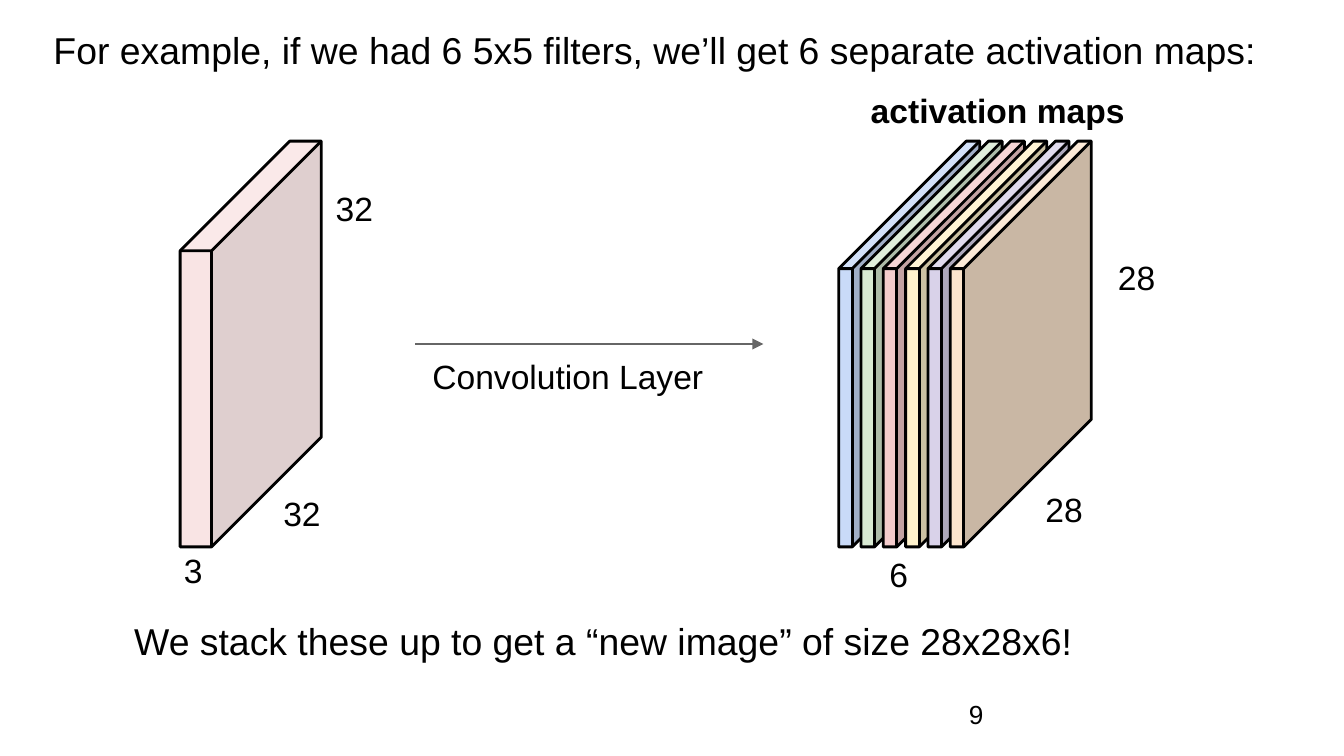
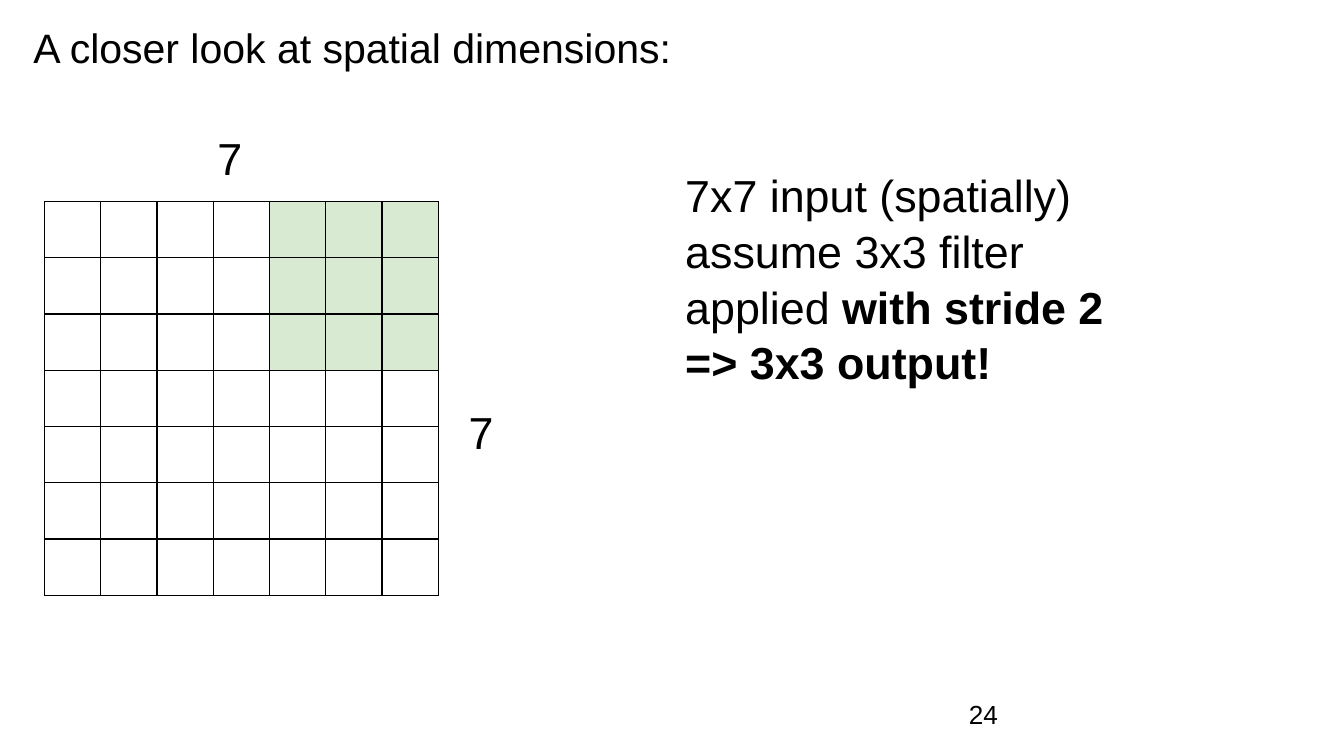
from lxml.etree import SubElement
from pptx import Presentation
from pptx.dml.color import RGBColor
from pptx.enum.shapes import MSO_CONNECTOR, MSO_SHAPE
from pptx.enum.text import MSO_ANCHOR
from pptx.oxml.ns import qn
from pptx.util import Pt

FONT = "Arial"
BLACK, WHITE, GRAY = "000000", "FFFFFF", "666666"
PINK, GREEN = "F4CCCC", "D9EAD3"
MAP_COLORS = ["C9DAF8", GREEN, PINK, "FFF2CC", "D9D2E9", "FCE5CD"]
CUBE_TOP, CUBE_WIDTH, CUBE_HEIGHT = 75.6, 75.6, 217.4
MAP_LEFT, MAP_STEP = 449.3, 11.95
GRID_SIZE, FILTER_SIZE, CELL = 7, 3, 30.14


def color(value):
    return RGBColor.from_string(value)


def add_text(page, text, left, top, width, height, size=18, bold=False,
             anchor=MSO_ANCHOR.TOP, line_spacing=None):
    """Add a text box; each line is a paragraph, and *stars* mark bold spans."""
    box = page.shapes.add_textbox(Pt(left), Pt(top), Pt(width), Pt(height))
    frame = box.text_frame
    frame.word_wrap = True
    frame.vertical_anchor = anchor
    frame.margin_left = frame.margin_right = Pt(7.2)
    frame.margin_top = frame.margin_bottom = Pt(7.2)
    for number, line in enumerate(text.split("\n")):
        para = frame.add_paragraph() if number else frame.paragraphs[0]
        para.line_spacing = line_spacing
        for index, piece in enumerate(line.split("*")):
            if piece:
                span = para.add_run()
                span.text = piece
                span.font.name = FONT
                span.font.size = Pt(size)
                span.font.bold = bold or index % 2 == 1
                span.font.color.rgb = color(BLACK)


def add_page_number(page, number):
    add_text(page, str(number), 512, 367.2, 43.2, 31, size=14,
             anchor=MSO_ANCHOR.MIDDLE)


def add_cube(page, left, fill, depth, opacity=None):
    """Add a cube; depth is the slanted share of its width, opacity a percentage."""
    cube = page.shapes.add_shape(MSO_SHAPE.CUBE, Pt(left), Pt(CUBE_TOP),
                                 Pt(CUBE_WIDTH), Pt(CUBE_HEIGHT))
    cube.adjustments[0] = depth
    cube.shadow.inherit = False
    cube.fill.solid()
    cube.fill.fore_color.rgb = color(fill)
    cube.line.color.rgb = color(BLACK)
    cube.line.width = Pt(1.5)
    if opacity is not None:
        fill_color = cube.element.spPr.find(qn("a:solidFill"))[0]
        SubElement(fill_color, qn("a:alpha"), val=str(opacity * 1000))


def add_arrow(page, left, right, top):
    arrow = page.shapes.add_connector(MSO_CONNECTOR.STRAIGHT, Pt(left), Pt(top),
                                      Pt(right), Pt(top))
    arrow.line.color.rgb = color(GRAY)
    arrow.line.width = Pt(0.75)
    SubElement(arrow.line._get_or_add_ln(), qn("a:tailEnd"), type="triangle")
    SubElement(arrow.element.spPr, qn("a:effectLst"))


def add_cell_borders(cell):
    properties = cell._tc.get_or_add_tcPr()
    for position, side in enumerate(["a:lnL", "a:lnR", "a:lnT", "a:lnB"]):
        border = SubElement(properties, qn(side), w=str(Pt(0.75)))
        properties.insert(position, border)
        fill = SubElement(border, qn("a:solidFill"))
        SubElement(fill, qn("a:srgbClr"), val=BLACK)


def add_input_grid(page, left, top):
    """Add the square input with the filter over its top right corner."""
    side = Pt(CELL * GRID_SIZE)
    table = page.shapes.add_table(GRID_SIZE, GRID_SIZE, Pt(left), Pt(top),
                                  side, side).table
    table.first_row = table.horz_banding = False
    for line in [*table.columns]:
        line.width = Pt(CELL)
    for line in table.rows:
        line.height = Pt(CELL)
    for row in range(GRID_SIZE):
        for column in range(GRID_SIZE):
            cell = table.cell(row, column)
            cell.margin_top = cell.margin_bottom = 0
            if row < FILTER_SIZE:
                covered = column >= GRID_SIZE - FILTER_SIZE
                cell.fill.solid()
                cell.fill.fore_color.rgb = color(GREEN if covered else WHITE)
            else:
                cell.fill.background()
            add_cell_borders(cell)


def build_activation_maps(page):
    add_text(page, "For example, if we had 6 5x5 filters, we’ll get 6 separate "
             "activation maps:", 21.6, 7.2, 687, 30, size=20)
    add_cube(page, 96.5, PINK, 0.777, opacity=52)
    add_text(page, "32", 172.8, 93.6, 39, 22)
    add_text(page, "32", 144.7, 257, 39, 24)
    add_text(page, "3", 91.4, 288, 39, 14)

    add_arrow(page, 222.5, 409, 184.3)
    add_text(page, "Convolution Layer", 224.6, 183.6, 258, 64)

    add_text(page, "activation maps", 459.4, 41, 163, 42, bold=True)
    for index, fill in enumerate(MAP_COLORS):
        add_cube(page, MAP_LEFT + index * MAP_STEP, fill, 0.904)
    add_text(page, "28", 591.8, 130.3, 39, 24)
    add_text(page, "28", 553, 254.9, 39, 24)
    add_text(page, "6", 469.4, 289.4, 26, 24)

    add_text(page, "We stack these up to get a “new image” of size 28x28x6!",
             64.8, 324, 679, 22, size=20)
    add_page_number(page, 9)


def build_spatial_dimensions(page):
    add_text(page, "A closer look at spatial dimensions:", 10.8, 5, 660, 48, size=22)
    add_text(page, "7", 109.4, 62.6, 43, 36, size=24)
    add_text(page, "7", 244, 209.5, 46, 22, size=24)
    add_input_grid(page, 23.8, 108)
    add_text(page, "7x7 input (spatially)\nassume 3x3 filter\n"
             "applied *with stride 2*\n*=> 3x3 output!*",
             360, 81.4, 403, 145, size=24, line_spacing=1.04)
    add_page_number(page, 24)


def main():
    deck = Presentation()
    deck.slide_width, deck.slide_height = Pt(720), Pt(405)
    for build in (build_activation_maps, build_spatial_dimensions):
        build(deck.slides.add_slide(deck.slide_layouts[6]))
    deck.save("out.pptx")


if __name__ == "__main__":
    main()
